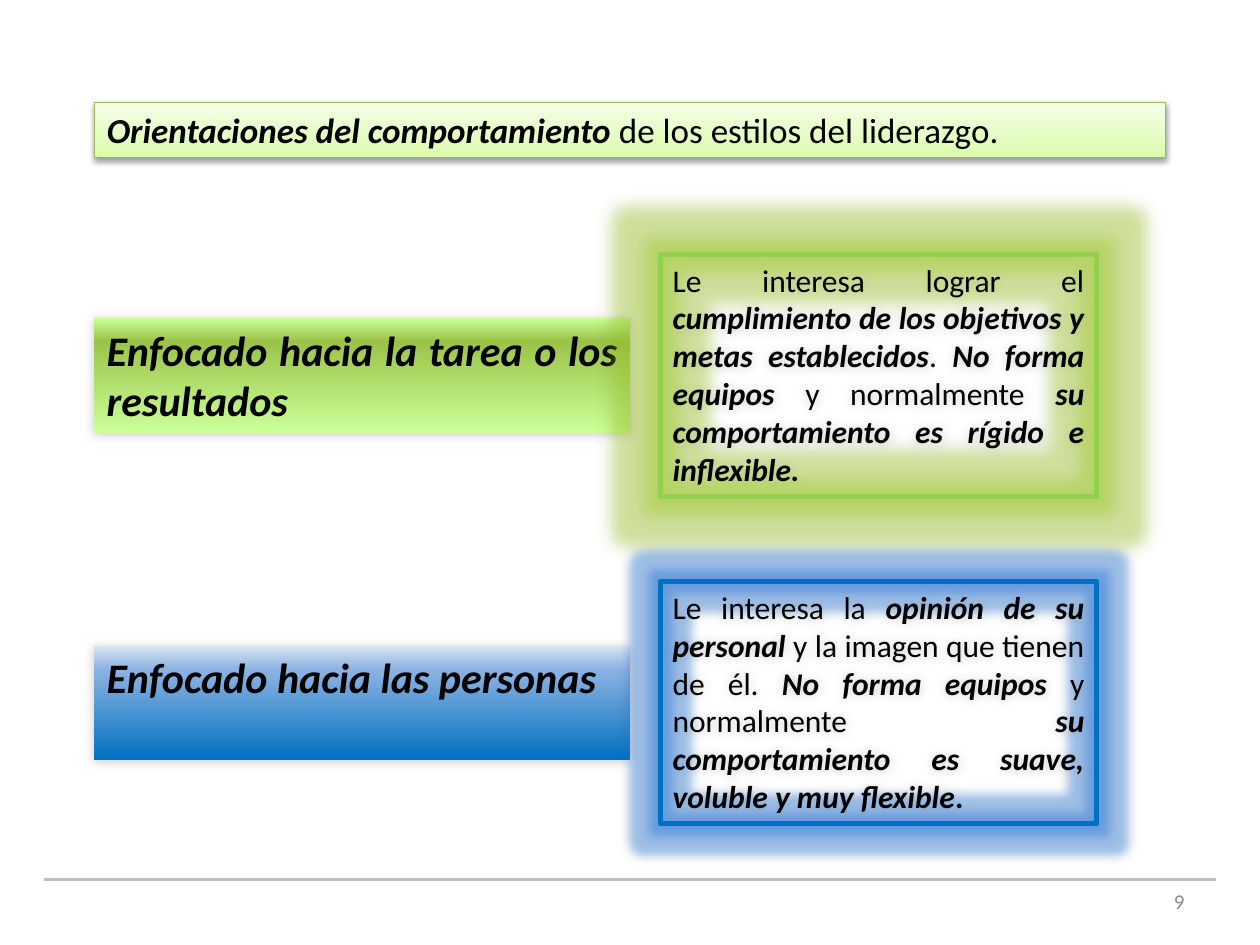
from lxml import etree
from pptx import Presentation
from pptx import util as u
from pptx.dml.color import RGBColor
from pptx.enum import shapes, text
from pptx.oxml import parse_xml
from pptx.oxml.ns import nsdecls, qn

BLACK = RGBColor(0x00, 0x00, 0x00)
GREY_LINE = RGBColor(0xBF, 0xBF, 0xBF)
GREY_TEXT = RGBColor(0x89, 0x89, 0x89)
TITLE_EDGE = RGBColor(0x98, 0xB9, 0x55)
GREEN = RGBColor(0x92, 0xD0, 0x50)
GREEN_GLOW = RGBColor(0xA5, 0xD0, 0x28)
LIME = RGBColor(0xCC, 0xFF, 0x99)
MOSS = RGBColor(0x9B, 0xC3, 0x48)
BLUE = RGBColor(0x00, 0x70, 0xC0)
BLUE_GLOW = RGBColor(0x2A, 0x7B, 0xE0)
SKY = RGBColor(0x8E, 0xB4, 0xE3)
PALE_BLUE = RGBColor(0xDC, 0xE6, 0xF2)
TITLE_STOPS = [(0, RGBColor(0xDA, 0xFD, 0xA7)), (35, RGBColor(0xE4, 0xFC, 0xC2)),
               (100, RGBColor(0xF5, 0xFF, 0xE7))]
PLAIN, STRONG, BOLD = (False, False), (True, True), (True, False)

ORIENTATIONS = [
    dict(heading="Enfocado hacia la tarea o los resultados",
         stops=[(0, LIME), (80, MOSS), (100, LIME)],
         edge=GREEN, glow=GREEN_GLOW, radius=18,
         runs=[("Le interesa lograr el", PLAIN),
               (" cumplimiento de los objetivos y metas establecidos", STRONG),
               (". ", PLAIN), ("No forma equipos ", STRONG), ("y normalmente", PLAIN),
               (" su comportamiento es rígido e inflexible.", STRONG)]),
    dict(heading="Enfocado hacia las personas",
         stops=[(0, BLUE), (80, SKY), (100, PALE_BLUE)],
         edge=BLUE, glow=BLUE_GLOW, radius=11,
         runs=[("Le interesa la ", PLAIN), ("opinión de su personal ", STRONG),
               ("y la imagen que tienen de él. ", PLAIN), ("No forma equipos ", STRONG),
               ("y normalmente ", PLAIN),
               ("su comportamiento es suave, voluble y muy flexible", STRONG),
               (".", BOLD)]),
]


def set_gradient(shape, stops):
    """Fill a shape with colour stops running from bottom to top."""
    shape.fill.gradient()
    properties = shape._element.spPr
    marks = "".join(f'<a:gs pos="{pos * 1000}"><a:srgbClr val="{color}"/></a:gs>'
                    for pos, color in stops)
    properties.replace(properties.find(qn("a:gradFill")), parse_xml(
        f'<a:gradFill {nsdecls("a")} rotWithShape="1"><a:gsLst>{marks}</a:gsLst>'
        '<a:lin ang="16200000" scaled="0"/></a:gradFill>'))


def add_effect(shape, kind, color, alpha, **lengths):
    """Append a glow or shadow to the effect list of a shape."""
    effects = shape._element.spPr.find(qn("a:effectLst"))
    effect = etree.SubElement(effects, qn(f"a:{kind}"))
    for name, value in lengths.items():
        effect.set(name, str(int(value)))
    shade = etree.SubElement(effect, qn("a:srgbClr"), val=str(color))
    etree.SubElement(shade, qn("a:alpha"), val=str(alpha * 1000))


def add_shadow(shape, alpha, blur, distance, angle):
    """Give a shape a black outer shadow."""
    add_effect(shape, "outerShdw", BLACK, alpha, blurRad=u.Pt(blur),
               dist=u.Pt(distance), dir=angle * 60000)


def write(shape, runs, size, color=BLACK, align=text.PP_ALIGN.JUSTIFY,
          anchor=text.MSO_ANCHOR.TOP):
    """Write one paragraph of formatted runs in a shape."""
    frame = shape.text_frame
    frame.word_wrap = True
    frame.auto_size = text.MSO_AUTO_SIZE.NONE
    frame.vertical_anchor = anchor
    para = frame.paragraphs[0]
    para.alignment = align
    for words, (bold, italic) in runs:
        span = para.add_run()
        span.text = words
        span.font.name = "Calibri"
        span.font.size = u.Pt(size)
        span.font.bold, span.font.italic = bold, italic
        span.font.color.rgb = color


def add_panel(page, left, top, width, height):
    """Add a rectangle without fill, line or effects."""
    panel = page.shapes.add_shape(shapes.MSO_SHAPE.RECTANGLE, u.Cm(left), u.Cm(top),
                                  u.Cm(width), u.Cm(height))
    panel.fill.background()
    panel.line.fill.background()
    panel.shadow.inherit = False
    return panel


def place_title(page, left, top, width, height):
    """Format the title placeholder as a pale green banner."""
    title = page.shapes.title
    title.left, title.top = u.Cm(left), u.Cm(top)
    title.width, title.height = u.Cm(width), u.Cm(height)
    set_gradient(title, TITLE_STOPS)
    title.line.color.rgb = TITLE_EDGE
    title.line.width = u.Pt(0.75)
    title.shadow.inherit = False
    add_shadow(title, 38, 3.1, 1.6, 90)
    write(title, [("Orientaciones del comportamiento", STRONG),
                  (" de los estilos del liderazgo.", PLAIN)], 20)


def place_orientation(page, left, top, height, item):
    """Place a heading bar and, to its right, the framed description."""
    bar_width, bar_height, frame_offset, frame_width = 10.8, 2.31, 11.41, 8.8
    heading = add_panel(page, left, top + (height - bar_height) / 2, bar_width, bar_height)
    set_gradient(heading, item["stops"])
    add_shadow(heading, 20, 6, 1, 135)
    write(heading, [(item["heading"], STRONG)], 24)

    frame = add_panel(page, left + frame_offset, top, frame_width, height)
    frame.line.color.rgb = item["edge"]
    frame.line.width = u.Pt(3)
    add_effect(frame, "glow", item["glow"], 40, rad=u.Pt(item["radius"]))
    add_shadow(frame, 20, 6, 0, 315)
    write(frame, item["runs"], 18)


def place_footer(page, left, top, width):
    """Draw the footer rule and the page number under it."""
    rule = page.shapes.add_connector(shapes.MSO_CONNECTOR.STRAIGHT, u.Cm(left), u.Cm(top),
                                     u.Cm(left + width), u.Cm(top))
    rule.line.color.rgb = GREY_LINE
    rule.line.width = u.Pt(2)
    etree.SubElement(rule._element.spPr, qn("a:effectLst"))
    number_width = 5.92
    number = page.shapes.add_textbox(u.Cm(left + width - number_width - 0.38),
                                     u.Cm(top - 0.08), u.Cm(number_width), u.Cm(1.02))
    write(number, [("9", PLAIN)], 12, GREY_TEXT, text.PP_ALIGN.RIGHT,
          text.MSO_ANCHOR.MIDDLE)


def main():
    """Build the slide and save it."""
    deck = Presentation()
    deck.slide_width, deck.slide_height = u.Cm(25.4), u.Cm(19.05)
    page = deck.slides.add_slide(deck.slide_layouts[5])
    margin, first_top, row_height, pitch = 1.9, 5.13, 4.88, 6.6
    place_footer(page, 0.89, 17.73, 23.62)
    place_title(page, margin, 2.06, 21.6, 1.12)
    for row, item in enumerate(ORIENTATIONS):
        place_orientation(page, margin, first_top + row * pitch, row_height, item)
    deck.save("out.pptx")


if __name__ == "__main__":
    main()
